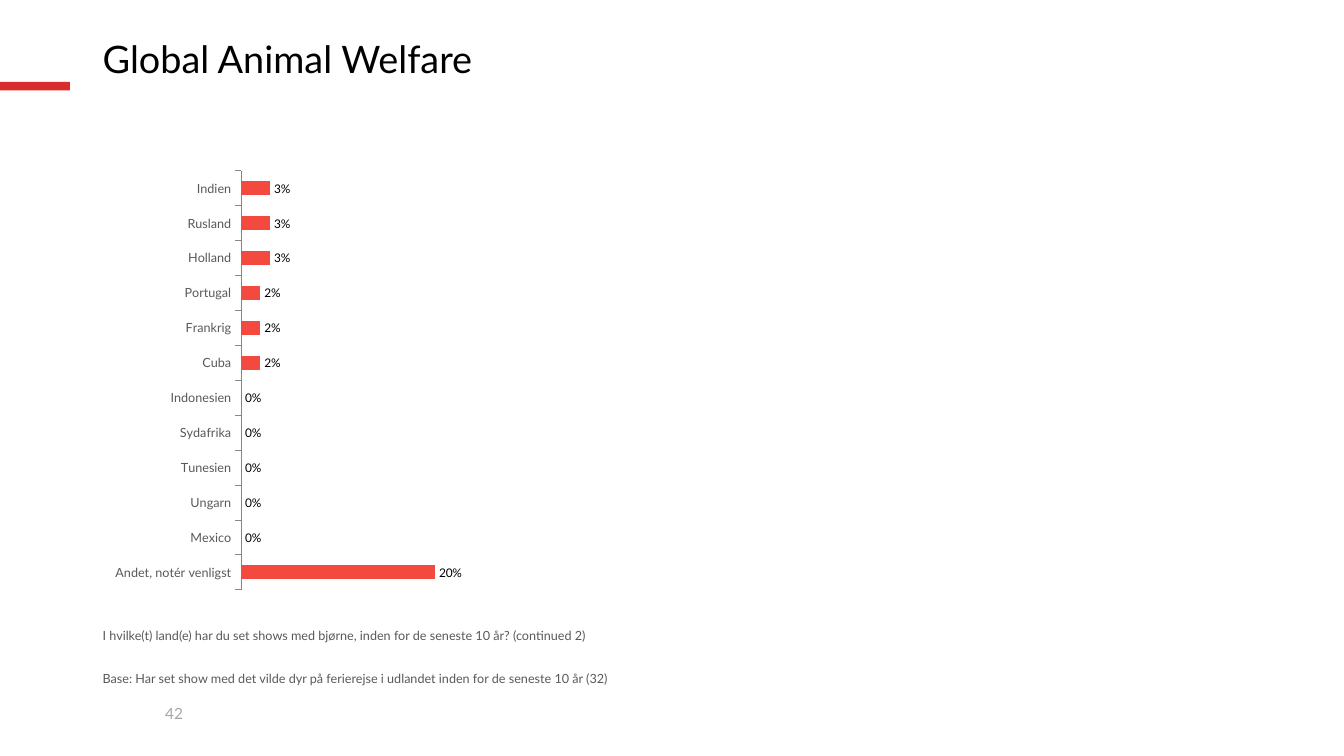
from dataclasses import dataclass

from lxml import etree
from pptx import Presentation
from pptx.chart.chart import Chart
from pptx.chart.data import CategoryChartData
from pptx.dml.color import RGBColor
from pptx.enum.chart import XL_CHART_TYPE, XL_LABEL_POSITION, XL_TICK_LABEL_POSITION, XL_TICK_MARK
from pptx.enum.shapes import MSO_SHAPE
from pptx.enum.text import MSO_ANCHOR
from pptx.oxml.ns import qn
from pptx.slide import Slide
from pptx.util import Pt

BAR_CLUSTERED = XL_CHART_TYPE.BAR_CLUSTERED
OUTSIDE_END = XL_LABEL_POSITION.OUTSIDE_END
LABELS_LOW = XL_TICK_LABEL_POSITION.LOW
TICK_OUTSIDE = XL_TICK_MARK.OUTSIDE
TICK_NONE = XL_TICK_MARK.NONE
RECTANGLE = MSO_SHAPE.RECTANGLE
TOP = MSO_ANCHOR.TOP
MIDDLE = MSO_ANCHOR.MIDDLE


@dataclass(frozen=True)
class Theme:
    font: str = "Lato"
    background: str = "FFFFFF"
    accent: str = "DA2C2D"
    bar: str = "F3493E"
    ink: str = "000000"
    muted: str = "595959"
    faint: str = "A6A6A6"
    axis: str = "868686"
    title_size: float = 27
    number_size: float = 11
    note_size: float = 9
    label_size: float = 8.5
    chart_size: float = 18


@dataclass(frozen=True)
class Area:
    left: float
    top: float
    width: float
    height: float

    def lengths(self) -> tuple[Pt, Pt, Pt, Pt]:
        return Pt(self.left), Pt(self.top), Pt(self.width), Pt(self.height)


@dataclass(frozen=True)
class TextItem:
    text: str
    area: Area
    size: float
    color: str
    anchor: MSO_ANCHOR = TOP
    line_spacing: float = 1.0


THEME = Theme()
MARGIN = 66.24
CONTENT_WIDTH = 828
ACCENT_BAR = Area(0, 58.4, 50, 6.2)
CHART_AREA = Area(MARGIN, 115.92, CONTENT_WIDTH, 311.76)
PLOT_FRACTIONS = {"x": 0.128, "y": 0.02, "w": 0.837, "h": 0.96}

TEXTS = [
    TextItem("42", Area(110.88, 499.68, 48.96, 20.88), THEME.number_size, THEME.faint),
    TextItem("Global Animal Welfare", Area(MARGIN, 25.2, CONTENT_WIDTH, 36.72),
             THEME.title_size, THEME.ink, MIDDLE, 0.9),
    TextItem("I hvilke(t) land(e) har du set shows med bjørne, inden for de seneste 10 år? (continued 2)",
             Area(MARGIN, 444.96, CONTENT_WIDTH, 30.96), THEME.note_size, THEME.muted),
    TextItem("Base: Har set show med det vilde dyr på ferierejse i udlandet inden for de seneste 10 år (32)",
             Area(MARGIN, 475.92, CONTENT_WIDTH, 20.16), THEME.note_size, THEME.muted),
]

COUNTRY_SHARES = {
    "Andet, notér venligst": 0.2,
    "Mexico": 0,
    "Ungarn": 0,
    "Tunesien": 0,
    "Sydafrika": 0,
    "Indonesien": 0,
    "Cuba": 0.02,
    "Frankrig": 0.02,
    "Portugal": 0.02,
    "Holland": 0.03,
    "Rusland": 0.03,
    "Indien": 0.03,
}


def style_font(font, size: float, color: str) -> None:
    font.name = THEME.font
    font.size = Pt(size)
    font.color.rgb = RGBColor.from_string(color)


def add_text(page: Slide, item: TextItem) -> None:
    frame = page.shapes.add_textbox(*item.area.lengths()).text_frame
    frame.word_wrap = True
    frame.vertical_anchor = item.anchor
    frame.margin_left = frame.margin_right = Pt(7.2)
    frame.margin_top = frame.margin_bottom = Pt(3.6)
    para = frame.paragraphs[0]
    para.text = item.text
    para.line_spacing = item.line_spacing
    style_font(para.font, item.size, item.color)


def add_accent(page: Slide) -> None:
    accent = page.shapes.add_shape(RECTANGLE, *ACCENT_BAR.lengths())
    accent.shadow.inherit = False
    accent.fill.solid()
    accent.fill.fore_color.rgb = RGBColor.from_string(THEME.accent)
    accent.line.fill.background()


def fix_plot_area(chart: Chart) -> None:
    plot_area = chart.element.find(".//" + qn("c:plotArea"))
    for existing in plot_area.findall(qn("c:layout")):
        plot_area.remove(existing)
    layout = etree.Element(qn("c:layout"))
    manual = etree.SubElement(layout, qn("c:manualLayout"))
    settings = {"layoutTarget": "inner", "xMode": "edge", "yMode": "edge", **PLOT_FRACTIONS}
    for name, value in settings.items():
        etree.SubElement(manual, qn(f"c:{name}"), val=str(value))
    plot_area.insert(0, layout)


def style_axes(chart: Chart) -> None:
    countries = chart.category_axis
    countries.tick_label_position = LABELS_LOW
    countries.major_tick_mark = TICK_OUTSIDE
    countries.minor_tick_mark = TICK_NONE
    countries.has_major_gridlines = False
    countries.format.line.color.rgb = RGBColor.from_string(THEME.axis)
    countries.format.line.width = Pt(0.75)
    style_font(countries.tick_labels.font, THEME.note_size, THEME.muted)
    shares = chart.value_axis
    shares.visible = False
    shares.has_major_gridlines = False
    shares.minimum_scale = 0
    shares.maximum_scale = 1
    shares.major_unit = 0.1
    shares.tick_labels.number_format = "0.00%"
    shares.tick_labels.number_format_is_linked = False


def add_country_chart(page: Slide) -> None:
    data = CategoryChartData()
    data.categories = list(COUNTRY_SHARES)
    data.add_series("Series 1", list(COUNTRY_SHARES.values()))
    chart = page.shapes.add_chart(BAR_CLUSTERED, *CHART_AREA.lengths(), data).chart
    chart.has_title = False
    chart.has_legend = False
    style_font(chart.font, THEME.chart_size, THEME.ink)
    style_axes(chart)
    fix_plot_area(chart)
    plot = chart.plots[0]
    plot.vary_by_categories = False
    plot.gap_width = 150
    plot.overlap = -10
    series = plot.series[0]
    series.format.fill.solid()
    series.format.fill.fore_color.rgb = RGBColor.from_string(THEME.bar)
    labels = series.data_labels
    labels.show_value = True
    labels.position = OUTSIDE_END
    labels.number_format = "0%"
    labels.number_format_is_linked = False
    style_font(labels.font, THEME.label_size, THEME.ink)


def main() -> None:
    deck = Presentation()
    deck.slide_width = Pt(960)
    deck.slide_height = Pt(540)
    page = deck.slides.add_slide(deck.slide_layouts[6])
    page.background.fill.solid()
    page.background.fill.fore_color.rgb = RGBColor.from_string(THEME.background)
    add_accent(page)
    add_country_chart(page)
    for item in TEXTS:
        add_text(page, item)
    deck.save("out.pptx")


if __name__ == "__main__":
    main()
